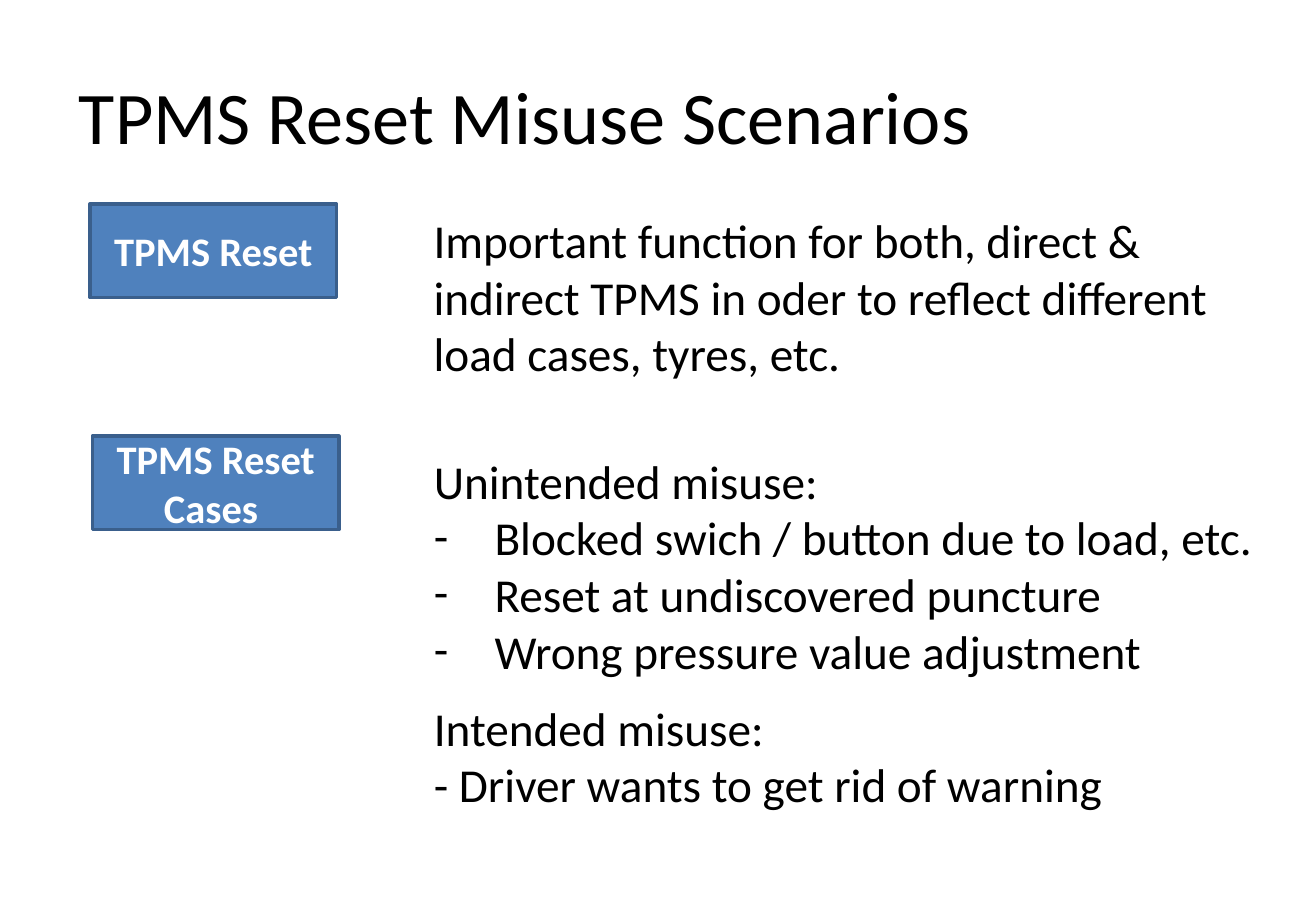
from lxml.etree import SubElement
from pptx import Presentation
from pptx.dml.color import RGBColor
from pptx.enum.shapes import MSO_SHAPE
from pptx.enum.text import MSO_ANCHOR, MSO_AUTO_SIZE, PP_ALIGN
from pptx.oxml.ns import qn
from pptx.util import Inches, Pt


def rgb(value):
    return RGBColor.from_string(value)


def style(p, size, color, bold=False):
    for r in p.runs:
        r.font.name = "Calibri"
        r.font.size = Pt(size)
        r.font.bold = bold
        r.font.color.rgb = rgb(color)


prs = Presentation()
prs.slide_width, prs.slide_height = Inches(10.83), Inches(7.5)
s = prs.slides.add_slide(prs.slide_layouts[1])
title, body = s.placeholders

# Title
title.left, title.top = Inches(0.55), Inches(0.43)
title.width, title.height = Inches(9.73), Inches(1.03)
title.text_frame.text = "TPMS Reset Misuse Scenarios"
title.text_frame.vertical_anchor = MSO_ANCHOR.MIDDLE
p = title.text_frame.paragraphs[0]
p.alignment = PP_ALIGN.LEFT
style(p, 44, "000000")

# Topic labels
for text, left, top in [("TPMS Reset", 0.74, 1.68), ("TPMS Reset Cases ", 0.76, 3.59)]:
    sp = s.shapes.add_shape(MSO_SHAPE.RECTANGLE, Inches(left), Inches(top),
                            Inches(2.03), Inches(0.77))
    sp.shadow.inherit = False
    sp.fill.solid()
    sp.fill.fore_color.rgb = rgb("4F81BD")
    sp.line.color.rgb = rgb("3A5F8C")
    sp.line.width = Pt(2)
    tf = sp.text_frame
    tf.text = text
    tf.word_wrap = True
    tf.vertical_anchor = MSO_ANCHOR.MIDDLE
    tf.paragraphs[0].alignment = PP_ALIGN.CENTER
    style(tf.paragraphs[0], 24, "FFFFFF", bold=True)

# Purpose of the reset
intro = s.shapes.add_textbox(Inches(3.47), Inches(1.69), Inches(7.23), Inches(1.51))
tf = intro.text_frame
tf.word_wrap = True
tf.text = ("Important function for both, direct & indirect TPMS in oder "
           "to reflect different load cases, tyres, etc.")
style(tf.paragraphs[0], 28, "000000")

# Misuse cases: text, dash bullet, space before in points
cases = [
    ("Unintended misuse:", False, 0),
    ("Blocked swich / button due to load, etc.", True, 0),
    ("Reset at undiscovered puncture", True, 0),
    ("Wrong pressure value adjustment", True, 0),
    ("Intended misuse:", False, 12),
    ("- Driver wants to get rid of warning", False, 0),
]
body.left, body.top = Inches(3.47), Inches(3.67)
body.width, body.height = Inches(7.23), Inches(3.1)
tf = body.text_frame
tf.auto_size = MSO_AUTO_SIZE.NONE
tf.text = "\n".join(text for text, _, _ in cases)
for p, (_, dash, gap) in zip(tf.paragraphs, cases):
    p.space_before = Pt(gap)
    style(p, 28, "000000")
    indent = Inches(0.5) if dash else 0
    pPr = p._p.get_or_add_pPr()
    pPr.set("marL", str(indent))
    pPr.set("indent", str(-indent))
    if dash:
        SubElement(pPr, qn("a:buFont"), typeface="Calibri")
        SubElement(pPr, qn("a:buChar"), char="-")
    else:
        SubElement(pPr, qn("a:buNone"))

prs.save("out.pptx")
